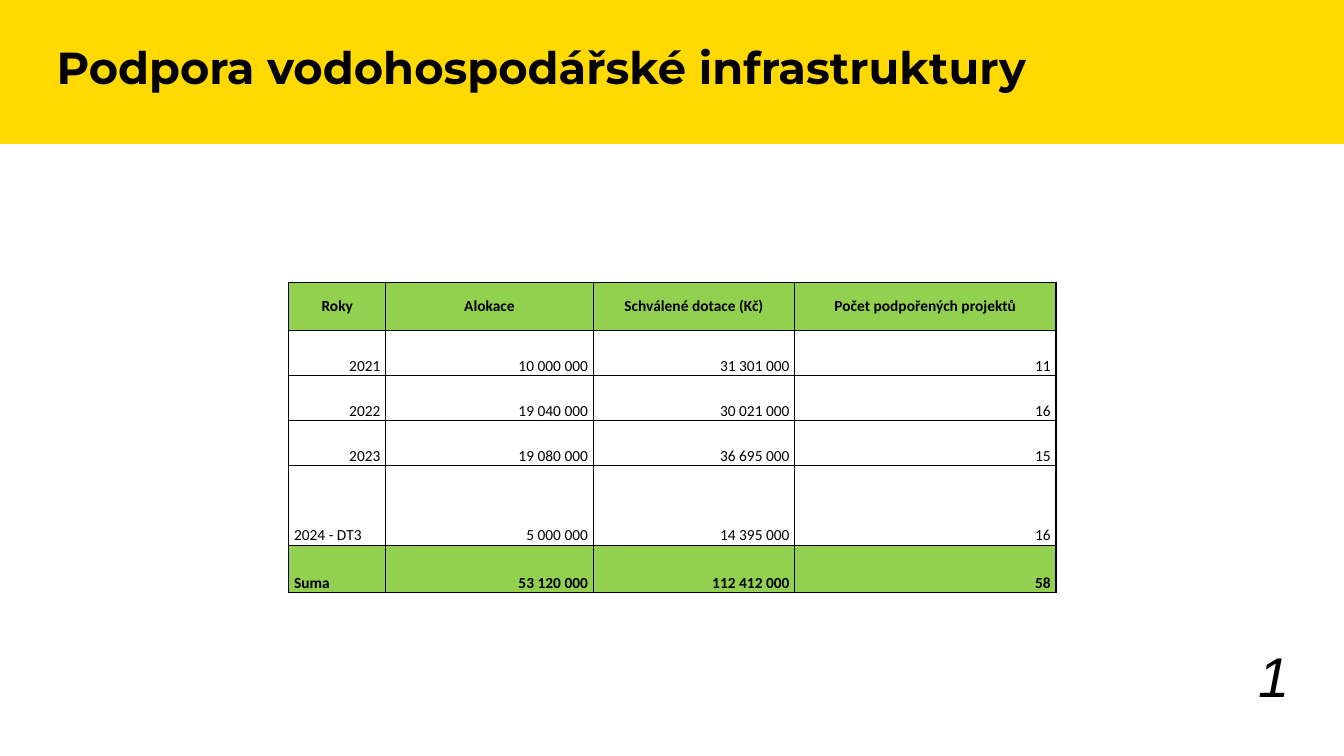
from dataclasses import dataclass

from lxml.etree import SubElement
from pptx import Presentation
from pptx.dml.color import RGBColor
from pptx.enum.shapes import MSO_SHAPE as Kind
from pptx.enum.text import MSO_ANCHOR as Anchor, PP_ALIGN as Align
from pptx.oxml.ns import qn
from pptx.util import Cm, Pt

BLACK = "000000"
GREEN = "92D050"
YELLOW = "FFD900"


@dataclass
class Style:
    font: str
    size: float
    bold: bool = False
    italic: bool = False


@dataclass
class Row:
    cells: tuple[str, ...]
    height: float
    strong: bool = False
    head: bool = False


COLS = (2.44, 5.23, 5.08, 6.58)
ROWS = (
    Row(("Roky", "Alokace", "Schválené dotace (Kč)", "Počet podpořených projektů"), 1.2, True, True),
    Row(("2021", "10 000 000", "31 301 000", "11"), 1.14),
    Row(("2022", "19 040 000", "30 021 000", "16"), 1.14),
    Row(("2023", "19 080 000", "36 695 000", "15"), 1.14),
    Row(("2024 - DT3", "5 000 000", "14 395 000", "16"), 2),
    Row(("Suma", "53 120 000", "112 412 000", "58"), 1.2, True),
)


def color(code: str) -> RGBColor:
    return RGBColor.from_string(code)


def write(frame, text: str, style: Style, align: Align) -> None:
    frame.text = text
    para = frame.paragraphs[0]
    para.alignment = align
    font = para.runs[0].font
    font.name, font.size = style.font, Pt(style.size)
    font.bold, font.italic = style.bold, style.italic
    font.color.rgb = color(BLACK)


def border(cell) -> None:
    props = cell._tc.get_or_add_tcPr()
    for side in ("lnL", "lnR", "lnT", "lnB"):
        line = SubElement(props, qn(f"a:{side}"), w=str(Pt(1)))
        fill = SubElement(line, qn("a:solidFill"))
        SubElement(fill, qn("a:srgbClr"), val=BLACK)


def choose(text: str, head: bool) -> Align:
    if head:
        return Align.CENTER
    return Align.RIGHT if text.replace(" ", "").isdigit() else Align.LEFT


def draw(cell, text: str, row: Row) -> None:
    cell.margin_left = cell.margin_right = Cm(0.13)
    cell.margin_top = cell.margin_bottom = 0
    cell.vertical_anchor = Anchor.MIDDLE if row.head else Anchor.BOTTOM
    write(cell.text_frame, text, Style("Calibri", 11, row.strong), choose(text, row.head))
    border(cell)
    if row.strong:
        cell.fill.solid()
        cell.fill.fore_color.rgb = color(GREEN)
    else:
        cell.fill.background()


def add_grid(slide) -> None:
    high = sum(row.height for row in ROWS)
    grid = slide.shapes.add_table(
        len(ROWS), len(COLS), Cm(7.28), Cm(7.12), Cm(sum(COLS)), Cm(high)
    ).table
    grid.first_row = grid.horz_banding = False
    for col, width in zip(grid.columns, COLS):
        col.width = Cm(width)
    for line, row in zip(grid.rows, ROWS):
        line.height = Cm(row.height)
        for cell, text in zip(line.cells, row.cells):
            draw(cell, text, row)


def add_band(slide, width: int) -> None:
    band = slide.shapes.add_shape(Kind.RECTANGLE, 0, 0, width, Cm(3.63))
    band.shadow.inherit = False
    band.fill.solid()
    band.fill.fore_color.rgb = color(YELLOW)
    band.line.fill.background()
    slide.shapes._spTree.insert(2, band._element)


def add_title(slide) -> None:
    title = slide.shapes.title
    title.left, title.top = Cm(1.17), Cm(1.02)
    title.width, title.height = Cm(31.29), Cm(2.59)
    frame = title.text_frame
    frame.word_wrap = True
    frame.vertical_anchor = Anchor.TOP
    write(frame, "Podpora vodohospodářské infrastruktury", Style("Montserrat", 32, True), Align.LEFT)
    frame.paragraphs[0].line_spacing = 0.9


def add_page(slide) -> None:
    frame = slide.shapes.add_textbox(Cm(25.12), Cm(16.54), Cm(7.62), Cm(1.45)).text_frame
    frame.word_wrap = True
    frame.vertical_anchor = Anchor.BOTTOM
    write(frame, "1", Style("Arial", 40, italic=True), Align.RIGHT)


def main() -> None:
    deck = Presentation()
    deck.slide_width, deck.slide_height = Cm(33.87), Cm(19.05)
    slide = deck.slides.add_slide(deck.slide_layouts[5])
    add_band(slide, deck.slide_width)
    add_title(slide)
    add_grid(slide)
    add_page(slide)
    deck.save("out.pptx")


if __name__ == "__main__":
    main()
